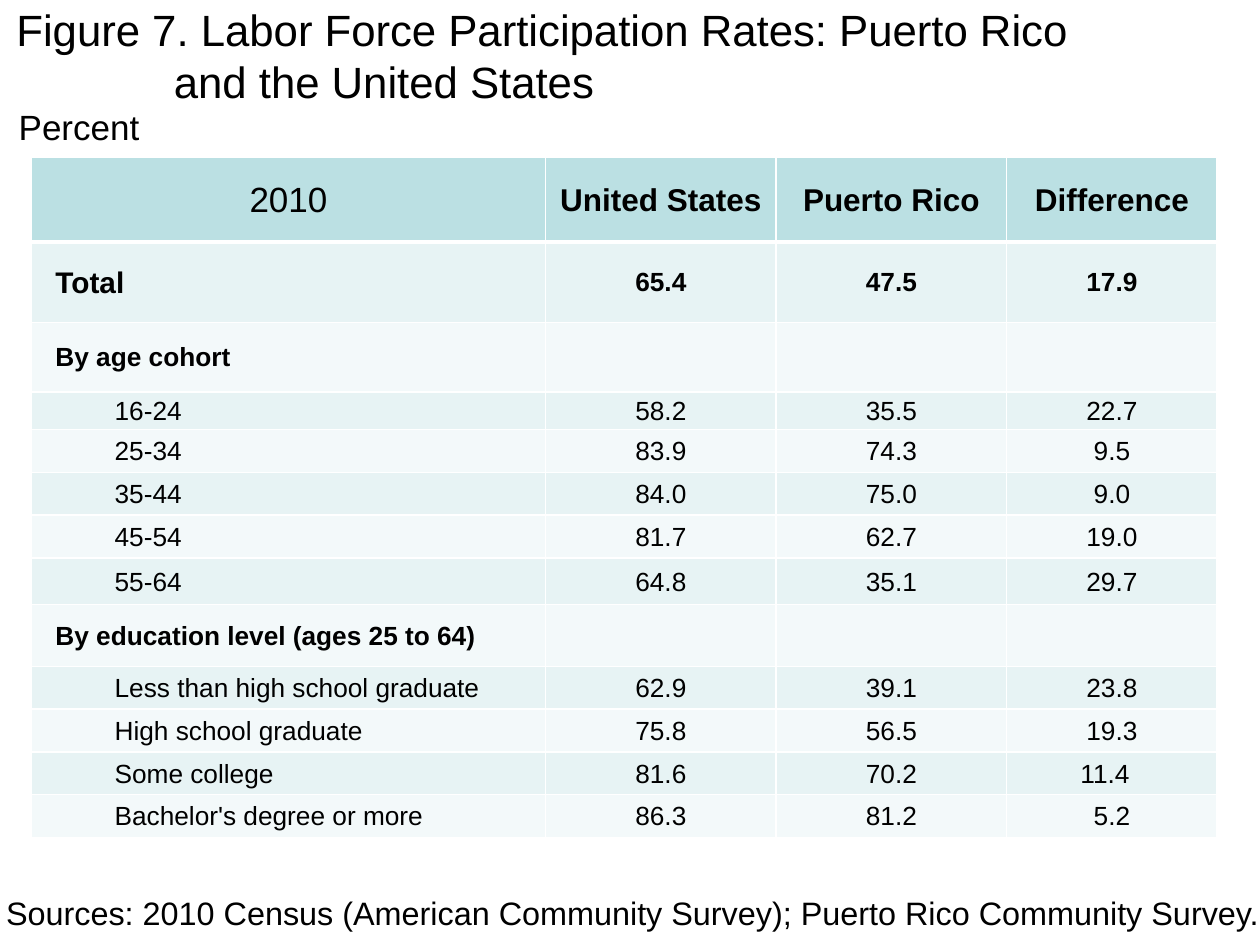
from lxml import etree
from pptx import Presentation
from pptx.dml.color import RGBColor
from pptx.enum.text import MSO_ANCHOR, PP_ALIGN
from pptx.oxml.ns import qn
from pptx.util import Inches, Pt

LEFT, CENTER = PP_ALIGN.LEFT, PP_ALIGN.CENTER
TOP, MIDDLE = MSO_ANCHOR.TOP, MSO_ANCHOR.MIDDLE

TITLE = "Figure 7. Labor Force Participation Rates: Puerto Rico\vand the United States"
UNIT = "Percent"
SOURCES = "Sources: 2010 Census (American Community Survey); Puerto Rico Community Survey."

# Row kind, height, cells
ROWS = [
    ("header", 0.67, ("2010", "United States", "Puerto Rico", "Difference")),
    ("total", 0.64, ("Total", "65.4", "47.5", "17.9")),
    ("group", 0.55, ("By age cohort", "", "", "")),
    ("item", 0.3, ("16-24", "58.2", "35.5", "22.7")),
    ("item", 0.34, ("25-34", "83.9", "74.3", "9.5")),
    ("item", 0.34, ("35-44", "84.0", "75.0", "9.0")),
    ("item", 0.34, ("45-54", "81.7", "62.7", "19.0")),
    ("item", 0.37, ("55-64", "64.8", "35.1", "29.7")),
    ("group", 0.49, ("By education level (ages 25 to 64)", "", "", "")),
    ("item", 0.34, ("Less than high school graduate", "62.9", "39.1", "23.8")),
    ("item", 0.34, ("High school graduate", "75.8", "56.5", "19.3")),
    ("item", 0.34, ("Some college", "81.6", "70.2", "11.4")),
    ("item", 0.34, ("Bachelor's degree or more", "86.3", "81.2", "5.2")),
]
COLUMN_WIDTHS = (4.08, 1.83, 1.83, 1.67)
LABEL_SIZES = {"header": 20, "total": 17, "group": 15, "item": 15}
LABEL_INSETS = {"header": 0.1, "total": 0.19, "group": 0.19, "item": 0.66}
HEADER_FILL = "BBE0E3"
BAND_FILLS = ("F3F9FA", "E7F3F4")


def rgb(hex_color):
    return RGBColor.from_string(hex_color)


def format_text(frame, size, align=LEFT, bold=False):
    paragraph = frame.paragraphs[0]
    paragraph.alignment = align
    font = paragraph.font
    font.name, font.size, font.bold = "Arial", Pt(size), bold
    font.color.rgb = rgb("000000")
    return paragraph


def add_caption(slide, text, size, left, top, width, height):
    frame = slide.shapes.add_textbox(*map(Inches, (left, top, width, height))).text_frame
    frame.word_wrap = True
    frame.text = text
    format_text(frame, size)


def set_borders(cell, bottom_width):
    """Draw white cell borders, 1 pt except for the bottom one."""
    properties = cell._tc.get_or_add_tcPr()
    widths = {"a:lnL": 1, "a:lnR": 1, "a:lnT": 1, "a:lnB": bottom_width}
    for position, (tag, width) in enumerate(widths.items()):
        line = etree.Element(qn(tag), w=str(Pt(width)))
        fill = etree.SubElement(line, qn("a:solidFill"))
        etree.SubElement(fill, qn("a:srgbClr"), val="FFFFFF")
        properties.insert(position, line)


def fill_cell(cell, kind, column, text, fill):
    is_header, is_label = kind == "header", column == 0
    cell.text = text
    cell.vertical_anchor = MIDDLE
    cell.margin_left = Inches(LABEL_INSETS[kind] if is_label else 0.01)
    cell.margin_right = Inches(0.1 if is_header and is_label else 0.01)
    cell.margin_top, cell.margin_bottom = Inches(0.01), 0
    if text == "11.4":  # this value sits left of the column centre
        cell.margin_right = Inches(0.12)
    if is_label:
        size = LABEL_SIZES[kind]
    else:
        size = 18 if is_header else 15
    bold = kind in ("total", "group") or (is_header and not is_label)
    align = LEFT if is_label and not is_header else CENTER
    format_text(cell.text_frame, size, align, bold)
    cell.fill.solid()
    cell.fill.fore_color.rgb = rgb(fill)
    set_borders(cell, 3 if is_header else 1)


def add_rates_table(slide):
    height = sum(row_height for _, row_height, _ in ROWS)
    rates = slide.shapes.add_table(
        len(ROWS), len(COLUMN_WIDTHS), Inches(0.25), Inches(1.25),
        Inches(sum(COLUMN_WIDTHS)), Inches(height)).table
    for column, width in zip(rates.columns, COLUMN_WIDTHS):
        column.width = Inches(width)
    for r, (kind, row_height, texts) in enumerate(ROWS):
        rates.rows[r].height = Inches(row_height)
        fill = HEADER_FILL if kind == "header" else BAND_FILLS[r % 2]
        for c, text in enumerate(texts):
            fill_cell(rates.cell(r, c), kind, c, text, fill)


def add_title(slide):
    title = slide.shapes.title
    title.left, title.top = Inches(0.03), Inches(-0.03)
    title.width, title.height = Inches(10.17), Inches(0.94)
    frame = title.text_frame
    frame.text = TITLE
    frame.vertical_anchor = TOP
    properties = format_text(frame, 25)._p.get_or_add_pPr()
    properties.set("marL", str(Inches(1.25)))
    properties.set("indent", str(Inches(-1.25)))


def main():
    deck = Presentation()
    deck.slide_width, deck.slide_height = Inches(10), Inches(7.5)
    slide = deck.slides.add_slide(deck.slide_layouts[5])
    add_rates_table(slide)
    add_title(slide)
    add_caption(slide, SOURCES, 18.5, -0.05, 7.04, 10.33, 0.41)
    add_caption(slide, UNIT, 20, 0.05, 0.79, 4.83, 0.44)
    deck.save("out.pptx")


if __name__ == "__main__":
    main()
